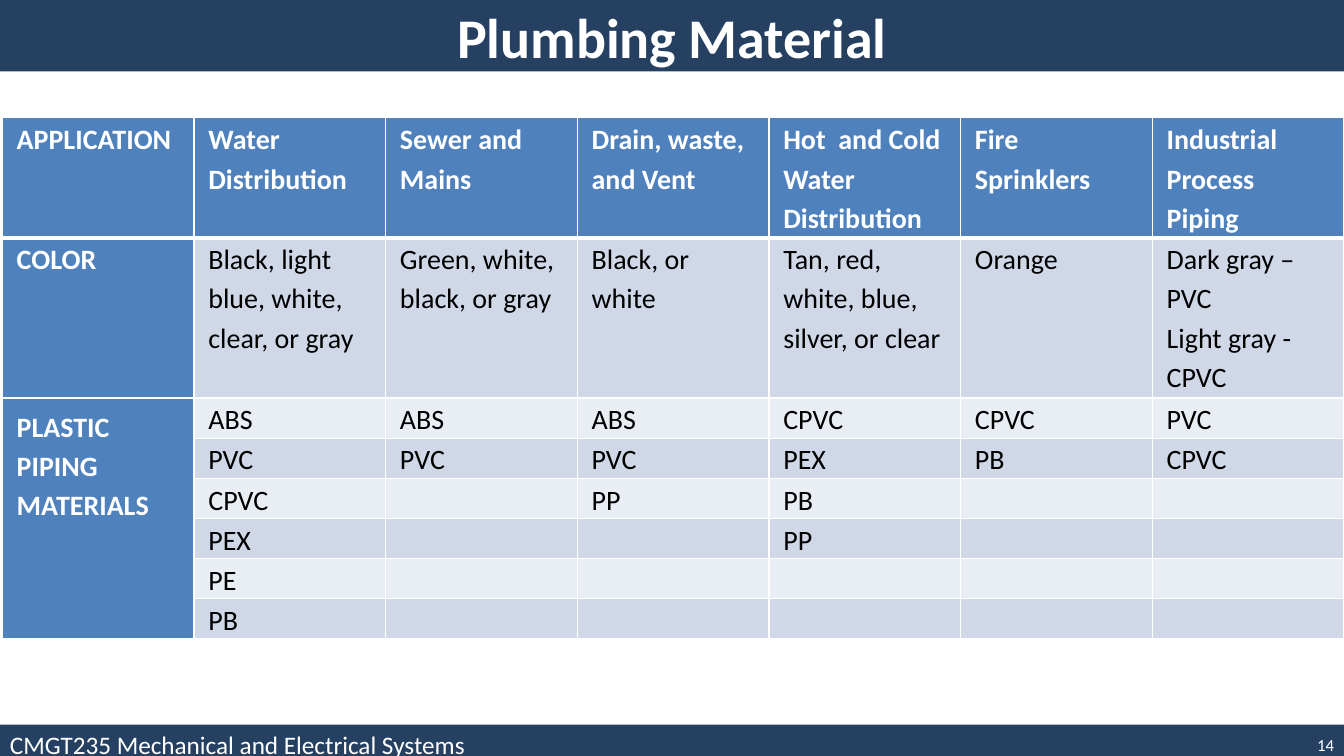
"""Build the Plumbing Material slide with its table of piping by application."""
from lxml.etree import SubElement
from pptx import Presentation
from pptx.dml.color import RGBColor
from pptx.enum.shapes import MSO_SHAPE
from pptx.enum.text import MSO_ANCHOR, MSO_AUTO_SIZE, PP_ALIGN
from pptx.oxml.ns import qn
from pptx.util import Cm, Pt

NAVY, BLUE, WHITE, BLACK = "254061", "4F81BD", "FFFFFF", "000000"
BANDS = ["E9EDF4", "D0D8E8"]
MATERIALS = "PLASTIC PIPING MATERIALS"
ROWS = [
    ["APPLICATION", "Water Distribution", "Sewer and Mains", "Drain, waste, and Vent",
     "Hot  and Cold Water Distribution", "Fire Sprinklers", "Industrial Process Piping"],
    ["COLOR", "Black, light blue, white, clear, or gray", "Green, white, black, or gray",
     "Black, or white", "Tan, red, white, blue, silver, or clear", "Orange",
     "Dark gray – PVC\nLight gray - CPVC"],
    [MATERIALS, "ABS", "ABS", "ABS", "CPVC", "CPVC", "PVC"],
    ["", "PVC", "PVC", "PVC", "PEX", "PB", "CPVC"],
    ["", "CPVC", "", "PP", "PB", "", ""],
    ["", "PEX", "", "", "PP", "", ""],
    ["", "PE", "", "", "", "", ""],
    ["", "PB", "", "", "", "", ""],
]
HEIGHTS = [3.02, 4.04] + [1.01] * 6


def fill(part, color):
    part.fill.solid()
    part.fill.fore_color.rgb = RGBColor.from_string(color)


def style(tf, size, color, bold=False, align=PP_ALIGN.LEFT):
    for p in tf.paragraphs:
        p.alignment = align
        for r in p.runs:
            r.font.name, r.font.size, r.font.bold = "Calibri", Pt(size), bold
            r.font.color.rgb = RGBColor.from_string(color)


prs = Presentation()
prs.slide_width, prs.slide_height = Cm(33.87), Cm(19.05)
s = prs.slides.add_slide(prs.slide_layouts[5])

title = s.shapes.title
title.left, title.top, title.width, title.height = Cm(0), Cm(0), Cm(33.87), Cm(1.8)
fill(title, NAVY)
tf = title.text_frame
tf.text = "Plumbing Material"
tf.auto_size, tf.word_wrap = MSO_AUTO_SIZE.NONE, False
tf.vertical_anchor = MSO_ANCHOR.MIDDLE
style(tf, 40, WHITE, True, PP_ALIGN.CENTER)

table = s.shapes.add_table(len(ROWS), 7, Cm(0.06), Cm(2.97), Cm(33.81), Cm(13.12)).table
table.first_row = table.horz_banding = False
for col in table.columns:
    col.width = Cm(4.83)
for i, (texts, height) in enumerate(zip(ROWS, HEIGHTS)):
    table.rows[i].height = Cm(height)
    for j, text in enumerate(texts):
        cell = table.cell(i, j)
        heading = i == 0 or j == 0
        cell.margin_left = cell.margin_right = Cm(0.36)
        cell.margin_top = cell.margin_bottom = Cm(0.18 if text == MATERIALS else 0)
        tf = cell.text_frame
        tf.text = text
        style(tf, 20, WHITE if heading else BLACK, heading)
        for p in tf.paragraphs:
            p.line_spacing = 1.15
        tcPr = cell._tc.get_or_add_tcPr()
        for side in ["lnL", "lnR", "lnT", "lnB"]:
            thick = (i, side) in [(0, "lnB"), (1, "lnT")]
            ln = SubElement(tcPr, qn(f"a:{side}"), w=str(Pt(3 if thick else 1)))
            SubElement(SubElement(ln, qn("a:solidFill")), qn("a:srgbClr"), val=WHITE)
        fill(cell, BLUE if heading else BANDS[i % 2])
table.cell(2, 0).merge(table.cell(len(ROWS) - 1, 0))

footer = s.shapes.add_shape(MSO_SHAPE.RECTANGLE, Cm(0), Cm(18.26), Cm(33.87), Cm(1.02))
footer.shadow.inherit = False
fill(footer, NAVY)
footer.line.fill.background()
tf = footer.text_frame
tf.text = "CMGT235 Mechanical and Electrical Systems"
tf.vertical_anchor = MSO_ANCHOR.MIDDLE
style(tf, 18, WHITE)

number = s.shapes.add_textbox(Cm(30.72), Cm(18.26), Cm(3.15), Cm(1.02))
tf = number.text_frame
tf.text = "14"
tf.word_wrap = True
tf.vertical_anchor = MSO_ANCHOR.MIDDLE
style(tf, 12, WHITE, align=PP_ALIGN.RIGHT)

prs.save("out.pptx")
